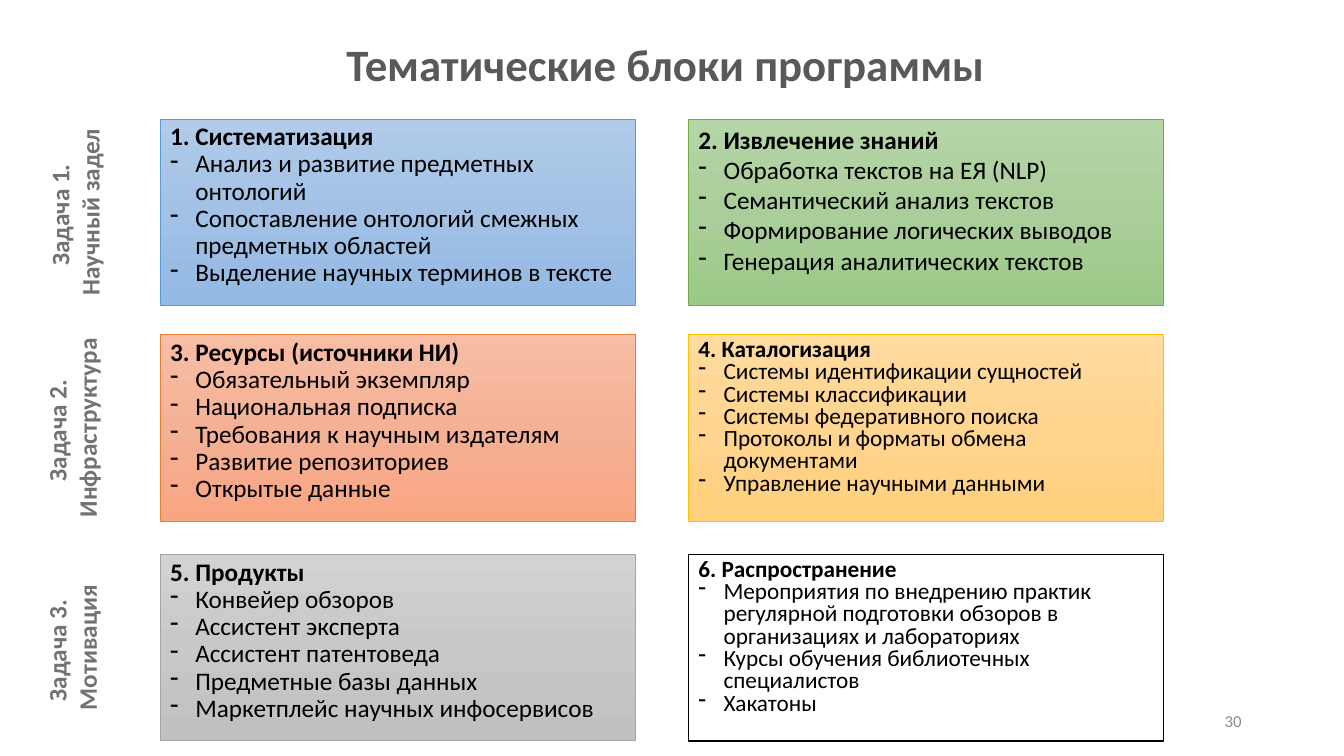
from copy import deepcopy

from lxml import etree
from pptx import Presentation
from pptx.dml.color import RGBColor
from pptx.enum.shapes import MSO_SHAPE
from pptx.enum.text import MSO_ANCHOR, MSO_AUTO_SIZE, PP_ALIGN
from pptx.oxml.ns import qn
from pptx.util import Pt

RECTANGLE = MSO_SHAPE.RECTANGLE
TOP, MIDDLE = MSO_ANCHOR.TOP, MSO_ANCHOR.MIDDLE
LEFT, CENTER, RIGHT = PP_ALIGN.LEFT, PP_ALIGN.CENTER, PP_ALIGN.RIGHT
FIT_SHAPE = MSO_AUTO_SIZE.SHAPE_TO_FIT_TEXT

FONT = "Calibri"
COLORS = {
    "title": "595959", "task": "767171", "number": "8C8C8C",
    "text": "000000", "white": "FFFFFF",
    "blue": "5B9BD5", "green": "70AD47", "orange": "ED7D31",
    "gold": "FFC000", "gray": "A5A5A5", "black": "000000",
}
GRADIENTS = {
    "blue": ("B1CBE9", "A3C1E5", "93B9E4"),
    "green": ("B5D5A7", "AACE9A", "9CC987"),
    "orange": ("F7BDA5", "F5B196", "F8A582"),
    "gold": ("FFDB9E", "FFD590", "FFD07C"),
    "gray": ("D2D2D2", "C8C8C8", "C0C0C0"),
}

# Grid of blocks: two columns, three rows
COLUMN_LEFTS = (114.5, 491.8)
ROW_TOPS = (85, 239, 396)
BLOCK_WIDTH, BLOCK_HEIGHT = 339.2, 133.2
BULLET_INDENT = 18

# Task label: text, width, horizontal centre
TASKS = [
    ("Задача 1. \vНаучный задел", 134.6, 53.6),
    ("Задача 2. \vИнфраструктура", 143.3, 51.5),
    ("Задача 3. \vМотивация", 104.4, 51.5),
]
TASK_HEIGHT = 51

# Block: colour, text size, line spacing, heading, items
BLOCKS = [
    ("blue", 18, 0.9, "1. Систематизация", [
        "Анализ и развитие предметных онтологий",
        "Сопоставление онтологий смежных предметных областей",
        "Выделение научных терминов в тексте"]),
    ("green", 18, 1.0, "2. Извлечение знаний", [
        "Обработка текстов на ЕЯ (NLP)",
        "Семантический анализ текстов",
        "Формирование логических выводов",
        "Генерация аналитических текстов"]),
    ("orange", 18, 0.9, "3. Ресурсы (источники НИ)", [
        "Обязательный экземпляр",
        "Национальная подписка",
        "Требования к научным издателям",
        "Развитие репозиториев",
        "Открытые данные"]),
    ("gold", 16.6, 0.8, "4. Каталогизация", [
        "Системы идентификации сущностей",
        "Системы классификации",
        "Системы федеративного поиска",
        "Протоколы и форматы обмена документами",
        "Управление научными данными"]),
    ("gray", 18, 0.9, "5. Продукты", [
        "Конвейер обзоров",
        "Ассистент эксперта",
        "Ассистент патентоведа",
        "Предметные базы данных",
        "Маркетплейс научных инфосервисов"]),
    ("black", 16.6, 0.8, "6. Распространение", [
        "Мероприятия по внедрению практик регулярной подготовки обзоров "
        "в организациях и лабораториях",
        "Курсы обучения библиотечных специалистов",
        "Хакатоны"]),
]


def format_paragraph(paragraph, size, color, bold, align):
    paragraph.alignment = align
    for run in paragraph.runs:
        run.font.name = FONT
        run.font.size = Pt(size)
        run.font.bold = bold
        run.font.color.rgb = RGBColor.from_string(COLORS[color])


def add_label(text, left, top, width, height, size, color, bold, align):
    label = slide.shapes.add_textbox(Pt(left), Pt(top), Pt(width), Pt(height))
    label.text_frame.word_wrap = True
    label.text_frame.vertical_anchor = MIDDLE
    label.text_frame.text = text
    format_paragraph(label.text_frame.paragraphs[0], size, color, bold, align)
    return label


presentation = Presentation()
presentation.slide_width, presentation.slide_height = Pt(960), Pt(540)
slide = presentation.slides.add_slide(presentation.slide_layouts[6])

# Title
title = add_label("Тематические блоки программы", 28, 0, 895, 96,
                  32, "title", True, CENTER)
title.text_frame.paragraphs[0].line_spacing = 0.9

# Thematic blocks
for index, (color, size, spacing, heading, items) in enumerate(BLOCKS):
    row, column = divmod(index, 2)
    block = slide.shapes.add_shape(
        RECTANGLE, Pt(COLUMN_LEFTS[column]), Pt(ROW_TOPS[row]),
        Pt(BLOCK_WIDTH), Pt(BLOCK_HEIGHT))
    block.shadow.inherit = False
    block.line.color.rgb = RGBColor.from_string(COLORS[color])

    if color in GRADIENTS:
        block.line.width = Pt(0.5)
        block.fill.gradient()
        block.fill.gradient_angle = 270
        stop_list = block.element.spPr.find(qn("a:gradFill")).find(qn("a:gsLst"))
        stop_list.insert(1, deepcopy(stop_list[0]))
        for step, stop in enumerate(block.fill.gradient_stops):
            stop.position = step / 2
            stop.color.rgb = RGBColor.from_string(GRADIENTS[color][step])
    else:
        block.line.width = Pt(1)
        block.fill.solid()
        block.fill.fore_color.rgb = RGBColor.from_string(COLORS["white"])

    frame = block.text_frame
    frame.word_wrap = True
    frame.vertical_anchor = TOP
    frame.text = "\n".join([heading, *items])
    for position, paragraph in enumerate(frame.paragraphs):
        format_paragraph(paragraph, size, "text", position == 0, LEFT)
        paragraph.line_spacing = spacing
        if position > 0:
            properties = paragraph._p.get_or_add_pPr()
            properties.set("marL", str(Pt(BULLET_INDENT)))
            properties.set("indent", str(-Pt(BULLET_INDENT)))
            etree.SubElement(properties, qn("a:buFontTx"))
            etree.SubElement(properties, qn("a:buChar")).set("char", "-")

# Task labels, turned to read upwards beside their rows
for (task, width, center), row_top in zip(TASKS, ROW_TOPS):
    label = add_label(task, center - width / 2,
                      row_top + (BLOCK_HEIGHT - TASK_HEIGHT) / 2,
                      width, TASK_HEIGHT, 18, "task", True, CENTER)
    label.rotation = 270
    label.text_frame.word_wrap = False
    label.text_frame.auto_size = FIT_SHAPE
    label.text_frame.vertical_anchor = TOP

# Slide number
add_label("30", 678, 500.5, 216, 28.8, 12, "number", False, RIGHT)

presentation.save("out.pptx")
